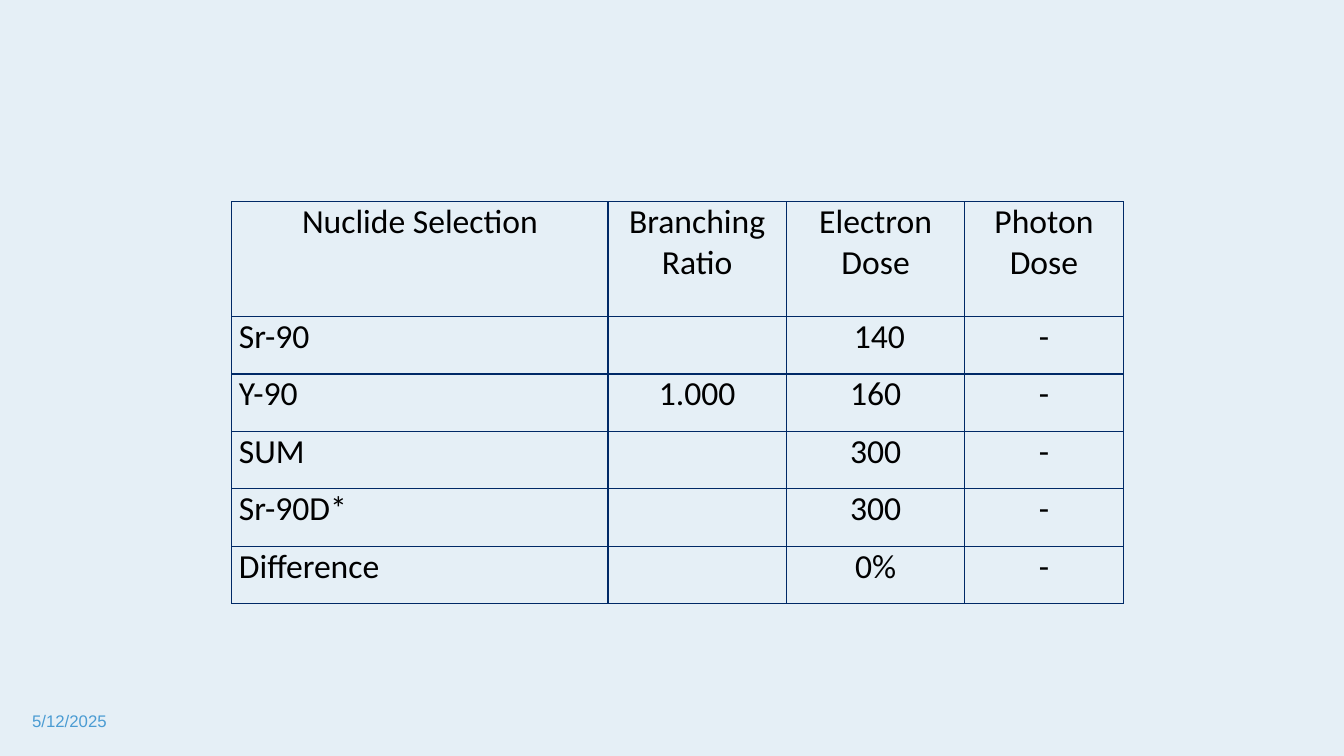
from lxml import etree
from pptx import Presentation
from pptx import util as u
from pptx.dml.color import RGBColor
from pptx.enum import text
from pptx.oxml import ns

BORDER = "002966"
ALIGN = text.PP_ALIGN


def color(hex_string):
    return RGBColor.from_string(hex_string)


def write(frame, content, size=24, font="Calibri", fill="000000", align=ALIGN.LEFT):
    paragraph = frame.paragraphs[0]
    paragraph.alignment = align
    paragraph.font.size = u.Pt(size)
    run = paragraph.add_run()
    run.text = content
    run.font.size = u.Pt(size)
    run.font.name = font
    run.font.bold = False
    run.font.color.rgb = color(fill)


# Slide and background
presentation = Presentation()
presentation.slide_width = u.Inches(13.33)
presentation.slide_height = u.Inches(7.5)
slide = presentation.slides.add_slide(presentation.slide_layouts[6])
slide.background.fill.solid()
slide.background.fill.fore_color.rgb = color("E5EFF6")

# Date
date_box = slide.shapes.add_textbox(u.Inches(0.22), u.Inches(6.95), u.Inches(3), u.Inches(0.4))
date_box.text_frame.word_wrap = True
date_box.text_frame.vertical_anchor = text.MSO_ANCHOR.MIDDLE
write(date_box.text_frame, "5/12/2025", size=12, font="Arial", fill="4B9CD3")

# Dose table
rows = [
    ["Nuclide Selection", "Branching Ratio", "Electron Dose", "Photon Dose"],
    ["Sr-90", "", " 140", "-"],
    ["Y-90", "1.000", "160", "-"],
    ["SUM", "", "300", "-"],
    ["Sr-90D*", "", "300", "-"],
    ["Difference", "", "0%", "-"],
]
column_widths = [3.73, 1.77, 1.77, 1.57]
table = slide.shapes.add_table(
    len(rows), len(column_widths), u.Inches(2.3), u.Inches(2), u.Inches(8.84), u.Inches(4)
).table
table.first_row = False
table.horz_banding = False
for column, width in zip(table.columns, column_widths):
    column.width = u.Inches(width)

for row_index, values in enumerate(rows):
    table.rows[row_index].height = u.Inches(0.57 if row_index else 1.14)
    for column_index, value in enumerate(values):
        cell = table.cell(row_index, column_index)
        cell.margin_left = cell.margin_right = u.Inches(0.07)
        cell.margin_top = cell.margin_bottom = 0

        # Cell borders come before the fill in the XML
        properties = cell._tc.get_or_add_tcPr()
        for side in ("a:lnL", "a:lnR", "a:lnT", "a:lnB"):
            line = etree.SubElement(properties, ns.qn(side), w=str(u.Pt(1)))
            solid = etree.SubElement(line, ns.qn("a:solidFill"))
            etree.SubElement(solid, ns.qn("a:srgbClr"), val=BORDER)
        cell.fill.background()

        if value:
            is_label = row_index > 0 and column_index == 0
            write(cell.text_frame, value, align=ALIGN.JUSTIFY if is_label else ALIGN.CENTER)

presentation.save("out.pptx")
